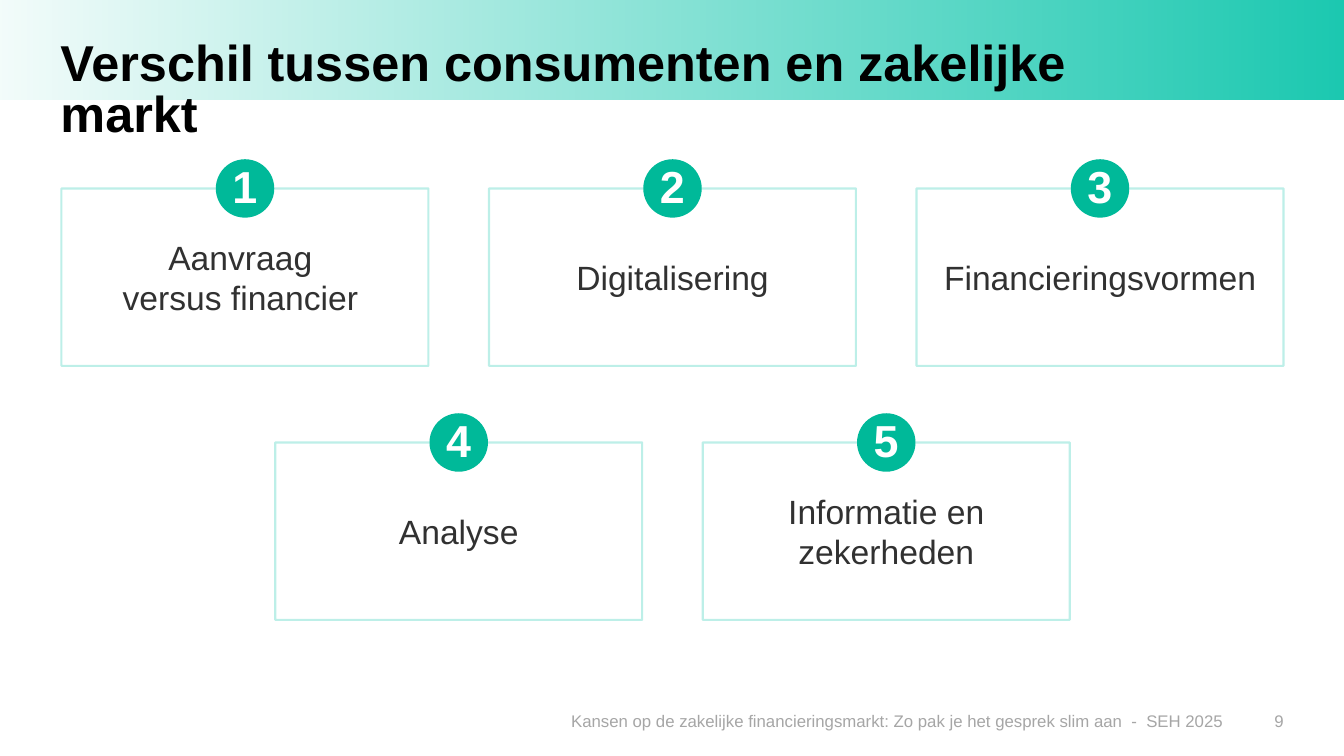
from dataclasses import dataclass

from lxml import etree
from pptx import Presentation
from pptx.dml.color import RGBColor
from pptx.enum.shapes import MSO_SHAPE
from pptx.enum.text import MSO_ANCHOR, MSO_AUTO_SIZE, PP_ALIGN
from pptx.oxml.ns import qn
from pptx.shapes.autoshape import Shape
from pptx.slide import Slide
from pptx.text.text import TextFrame
from pptx.util import Inches, Pt

RECTANGLE, OVAL = MSO_SHAPE.RECTANGLE, MSO_SHAPE.OVAL
TOP, MIDDLE = MSO_ANCHOR.TOP, MSO_ANCHOR.MIDDLE
LEFT, CENTER, RIGHT = PP_ALIGN.LEFT, PP_ALIGN.CENTER, PP_ALIGN.RIGHT
FIT_SHAPE = MSO_AUTO_SIZE.SHAPE_TO_FIT_TEXT


@dataclass(frozen=True)
class Theme:
    font: str = "Arial"
    teal: str = "00C3A8"
    badge: str = "00B999"
    title: str = "000000"
    body: str = "313131"
    muted: str = "A6A6A6"
    white: str = "FFFFFF"
    title_size: int = 36
    badge_size: int = 32
    body_size: int = 24
    footer_size: int = 12


@dataclass(frozen=True)
class Card:
    text: str
    column: float
    row: int


@dataclass(frozen=True)
class Footer:
    text: str
    left: float
    width: float


THEME = Theme()
SLIDE_W, SLIDE_H = 13.33, 7.5
CARD_LEFT, CARD_TOP = 0.61, 1.87
CARD_W, CARD_H = 3.64, 1.76
COLUMN_STEP, ROW_STEP = 4.24, 2.52
BADGE = 0.58

CARDS = [
    Card("Aanvraag \vversus financier ", 0, 0),
    Card("Digitalisering", 1, 0),
    Card("Financieringsvormen", 2, 0),
    Card("Analyse", 0.5, 1),
    Card("Informatie en zekerheden", 1.5, 1),
]
FOOTERS = [
    Footer("Kansen op de zakelijke financieringsmarkt: Zo pak je het gesprek slim aan  -  SEH 2025", 4.86, 7.28),
    Footer("9", 12.34, 0.39),
]


def set_alpha(color: etree._Element, percent: int) -> None:
    etree.SubElement(color, qn("a:alpha")).set("val", str(percent * 1000))


def set_margins(tf: TextFrame, side: float, top: float, bottom: float) -> None:
    tf.margin_left = tf.margin_right = Inches(side)
    tf.margin_top, tf.margin_bottom = Inches(top), Inches(bottom)


def write(tf: TextFrame, text: str, size: int, color: str, align: PP_ALIGN,
          anchor: MSO_ANCHOR = TOP, bold: bool = False, wrap: bool = True) -> None:
    tf.word_wrap = wrap
    tf.vertical_anchor = anchor
    tf.text = text
    p = tf.paragraphs[0]
    p.alignment = align
    p.font.name = THEME.font
    p.font.size = Pt(size)
    p.font.bold = bold
    p.font.color.rgb = RGBColor.from_string(color)


def add_title(s: Slide) -> Shape:
    title = s.shapes.title
    title.left, title.top = Inches(0.6), Inches(0.4)
    title.width, title.height = Inches(10.51), Inches(0.51)
    tf = title.text_frame
    set_margins(tf, 0, 0, 0)
    write(tf, "Verschil tussen consumenten en zakelijke markt",
          THEME.title_size, THEME.title, LEFT, bold=True)
    tf.auto_size = FIT_SHAPE
    tf.paragraphs[0].line_spacing = 0.85
    return title


def add_band(s: Slide, title: Shape) -> None:
    band = s.shapes.add_shape(RECTANGLE, 0, 0, Inches(SLIDE_W), Inches(0.99))
    band.shadow.inherit = False
    band.line.fill.background()
    band.fill.gradient()
    band.fill.gradient_angle = 0
    for stop, position in zip(band.fill.gradient_stops, (0, 1)):
        stop.position = position
        stop.color.rgb = RGBColor.from_string(THEME.teal)
    colors = band.element.spPr.findall(".//" + qn("a:srgbClr"))
    for color, percent in zip(colors, (5, 90)):
        set_alpha(color, percent)
    title.element.addprevious(band.element)


def add_card(s: Slide, number: int, card: Card) -> None:
    left = CARD_LEFT + card.column * COLUMN_STEP
    top = CARD_TOP + card.row * ROW_STEP
    group = s.shapes.add_group_shape()

    box = group.shapes.add_shape(RECTANGLE, Inches(left), Inches(top), Inches(CARD_W), Inches(CARD_H))
    box.shadow.inherit = False
    box.fill.background()
    box.line.color.rgb = RGBColor.from_string(THEME.teal)
    box.line.width = Pt(1.5)
    set_alpha(box.element.spPr.find(".//" + qn("a:srgbClr")), 25)
    write(box.text_frame, card.text, THEME.body_size, THEME.body, CENTER, MIDDLE)

    badge = group.shapes.add_shape(OVAL, Inches(left + (CARD_W - BADGE) / 2), Inches(top - BADGE / 2),
                                   Inches(BADGE), Inches(BADGE))
    badge.shadow.inherit = False
    badge.fill.solid()
    badge.fill.fore_color.rgb = RGBColor.from_string(THEME.badge)
    badge.line.fill.background()
    set_margins(badge.text_frame, 0.1, 0, 0.05)
    write(badge.text_frame, str(number), THEME.badge_size, THEME.white, CENTER, MIDDLE,
          bold=True, wrap=False)


def add_footer(s: Slide, footer: Footer) -> None:
    tf = s.shapes.add_textbox(Inches(footer.left), Inches(7.05), Inches(footer.width), Inches(0.2)).text_frame
    set_margins(tf, 0, 0, 0)
    write(tf, footer.text, THEME.footer_size, THEME.muted, RIGHT)
    tf.auto_size = FIT_SHAPE


def main() -> None:
    prs = Presentation()
    prs.slide_width, prs.slide_height = Inches(SLIDE_W), Inches(SLIDE_H)
    s = prs.slides.add_slide(prs.slide_layouts[5])
    add_band(s, add_title(s))
    for number, card in enumerate(CARDS, 1):
        add_card(s, number, card)
    for footer in FOOTERS:
        add_footer(s, footer)
    prs.save("out.pptx")


if __name__ == "__main__":
    main()
